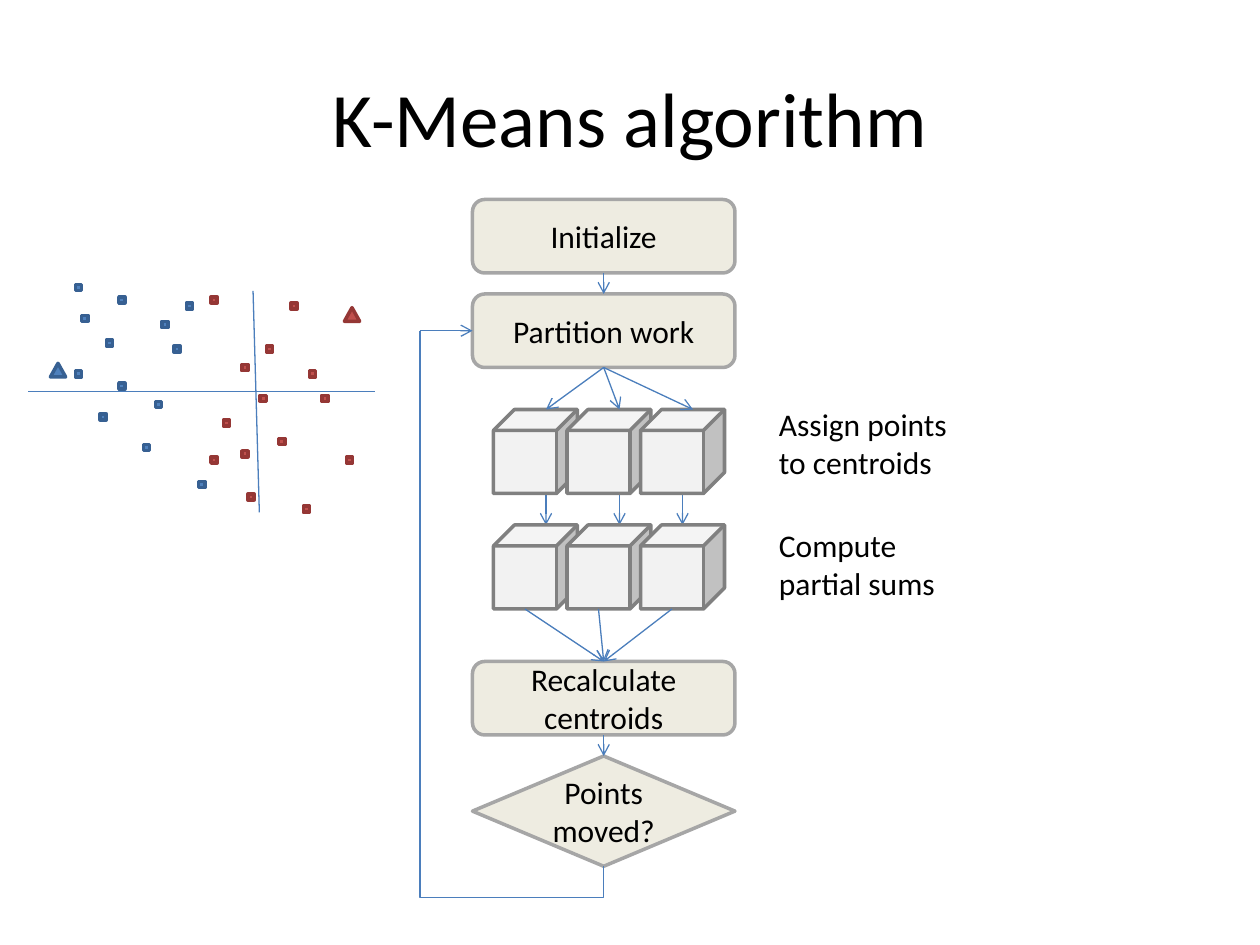
from lxml import etree
from pptx import Presentation
from pptx import util as u
from pptx.dml.color import RGBColor
from pptx.enum import shapes, text
from pptx.oxml.ns import qn

HUES = {"ink": "000000", "link": "4B7EBC", "box": "EEECE1", "edge": "A6A6A6",
        "cube": "F2F2F2", "rim": "808080", "blue": "4F81BD", "navy": "376092",
        "red": "C0504D", "wine": "953735"}
KIND = shapes.MSO_SHAPE
WIRE = shapes.MSO_CONNECTOR

deck = Presentation()
deck.slide_width, deck.slide_height = u.Inches(10), u.Inches(7.5)
unit = deck.slide_width / 120  # the slide is a grid of 120 columns by 90 rows
page = deck.slides.add_slide(deck.slide_layouts[5])


def draw(kind, col, row, wide, high, fill, line, words=""):
    item = page.shapes.add_shape(kind, *(round(n * unit) for n in (col, row, wide, high)))
    item.shadow.inherit = False
    item.fill.solid()
    item.fill.fore_color.rgb = RGBColor.from_string(HUES[fill])
    item.line.color.rgb = RGBColor.from_string(HUES[line])
    item.line.width = u.Pt(2)
    if words:
        run = item.text_frame.paragraphs[0].add_run()
        run.text = words
        run.font.size, run.font.name = u.Pt(18), "Calibri"
        run.font.color.rgb = RGBColor.from_string(HUES["ink"])
    return item


def link(start, end, tip=True, kind=WIRE.STRAIGHT):
    """Draw a line between two (column, row) points, with an arrowhead if tip."""
    wire = page.shapes.add_connector(kind, *(round(n * unit) for n in (*start, *end)))
    wire.line.color.rgb = RGBColor.from_string(HUES["link"])
    wire.line.width = u.Pt(0.75)
    if tip:
        etree.SubElement(wire.line._get_or_add_ln(), qn("a:tailEnd"), type="arrow")
    etree.SubElement(wire._element.spPr, qn("a:effectLst"))
    return wire


# Title
title = page.shapes.title
title.left, title.top, title.width, title.height = (
    round(n * unit) for n in (6, 3.6, 108, 15))
title.text_frame.vertical_anchor = text.MSO_ANCHOR.MIDDLE
head = title.text_frame.paragraphs[0]
head.alignment = text.PP_ALIGN.CENTER
run = head.add_run()
run.text = "K-Means algorithm"
run.font.size, run.font.name = u.Pt(44), "Calibri"
run.font.color.rgb = RGBColor.from_string(HUES["ink"])

# Arrows between the two rows of cubes, partly behind them
for col in (65, 59, 52):
    link((col, 46.5), (col, 50))

# Steps of the flow
left, wide, high = 45, 25, 7
mid = left + wide / 2
steps = [draw(KIND.FLOWCHART_ALTERNATE_PROCESS, left, row, wide, high, "box", "edge", words)
         for row, words in ((19, "Initialize"), (28, "Partition work"),
                            (63, "Recalculate centroids"))]
first, split, merge = steps
test = draw(KIND.FLOWCHART_DECISION, left, 72, wide, 10.5, "box", "edge", "Points moved?")

# Loop back: an elbow turned a quarter, then the arrow into the partition step
loop = link((74.25, 48.25), (23.25, 65.75), False, WIRE.ELBOW)
loop._element.spPr.find(qn("a:xfrm")).set("rot", "5400000")
bend = loop._element.spPr.find(qn("a:prstGeom")).get_or_add_avLst()
etree.SubElement(bend, qn("a:gd"), name="adj1", fmla="val -5882")
link((40, 31.5), (left, 31.5)).end_connect(split, 1)

# Parallel workers and their captions
for row in (39, 50):
    for i in range(3):
        draw(KIND.CUBE, 47 + 7 * i, row, 8, 8, "cube", "rim")
for row, words in ((38, "Assign points to centroids"), (49.5, "Compute partial sums")):
    note = page.shapes.add_textbox(*(round(n * unit) for n in (73, row, 21, 8.5)))
    note.text_frame.word_wrap = True
    run = note.text_frame.paragraphs[0].add_run()
    run.text = words
    run.font.size, run.font.name = u.Pt(18), "Calibri"
    run.font.color.rgb = RGBColor.from_string(HUES["ink"])

# Arrows between the steps
for above, below, top, foot in ((first, split, 26, 28), (merge, test, 70, 72)):
    wire = link((mid, top), (mid, foot))
    wire.begin_connect(above, 2)
    wire.end_connect(below, 0)
for col in (52, 59, 66):
    link((mid, 35), (col, 39)).begin_connect(split, 2)
for col in (50, 57, 64):
    link((col, 58), (mid, 63)).end_connect(merge, 0)

# Scatter of points: (column, row) on a finer grid, 44 cells across
cell = 25.8 / 44
blue = [(0, 0), (1, 5), (7, 2), (5, 9), (14, 6), (7, 16), (16, 10), (0, 14),
        (13, 19), (4, 21), (11, 26), (18, 3), (20, 32)]
red = [(22, 2), (22, 28), (24, 22), (27, 13), (35, 3), (31, 10), (30, 18), (27, 27),
       (28, 34), (33, 25), (38, 14), (40, 18), (44, 28), (37, 36)]
for dots, fill, line in ((blue, "blue", "navy"), (red, "red", "wine")):
    for x, y in dots:
        draw(KIND.RECTANGLE, 7.2 + x * cell, 27.1 + y * cell, cell, cell, fill, line)

# Centroids and axes
for col, row, fill, line in ((4.8, 34.6, "blue", "navy"), (32.8, 29.3, "red", "wine")):
    draw(KIND.ISOSCELES_TRIANGLE, col, row, 1.45, 1.3, fill, line)
link((2.7, 37.3), (35.7, 37.3), False)
link((24.1, 27.7), (24.7, 48.8), False)

deck.save("out.pptx")
